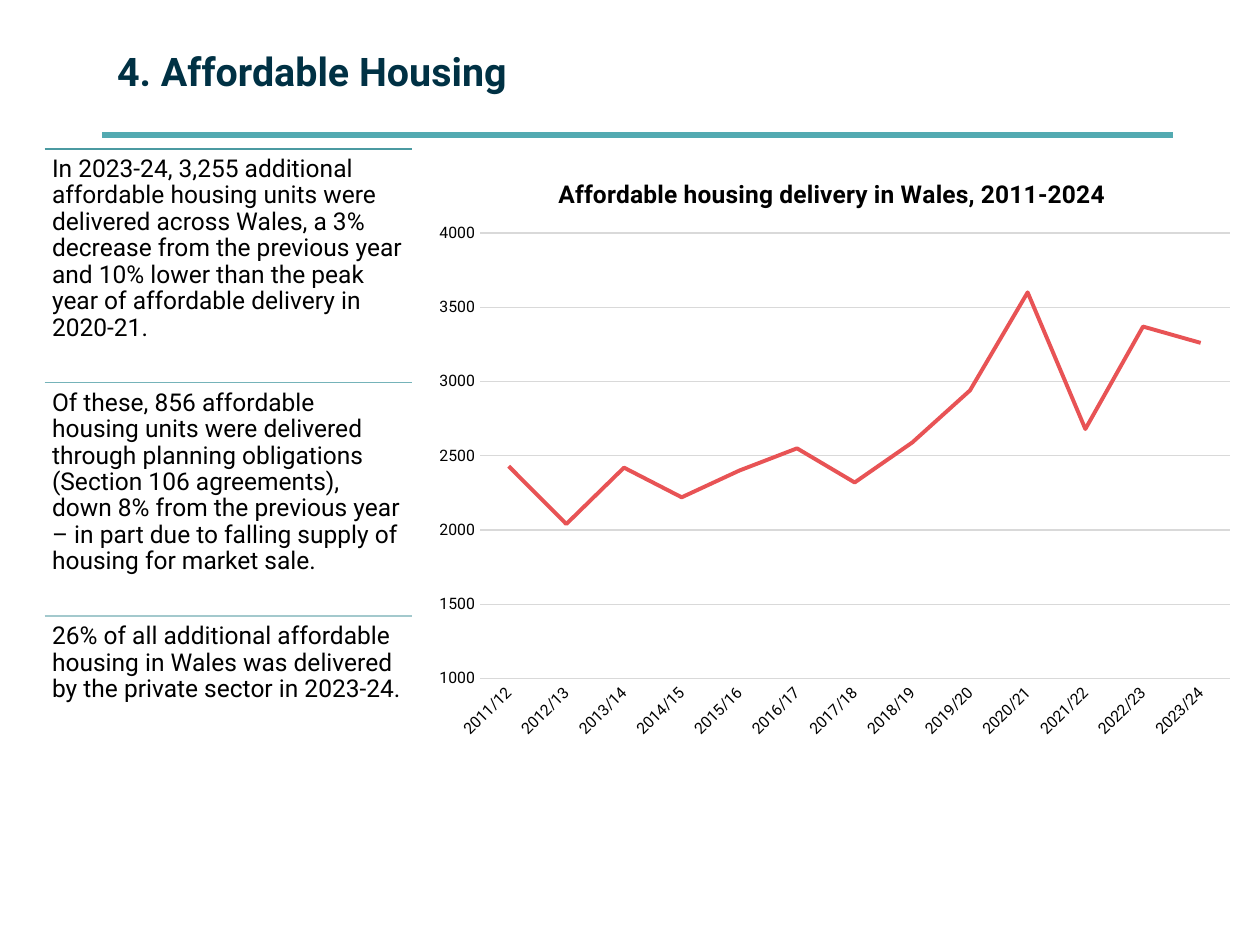
import pptx
import pptx.chart.data
import pptx.dml.color
import pptx.enum.chart
import pptx.enum.shapes
import pptx.enum.text
import pptx.oxml.ns
import pptx.oxml.xmlchemy
import pptx.util
from pptx.util import Cm, Pt

FONT = "Roboto"
BLACK = "000000"
GRID = "D9D9D9"

FACTS = [
    ("4B9AA1", "In 2023-24, 3,255 additional affordable housing units were delivered "
               "across Wales, a 3% decrease from the previous year and 10% lower than "
               "the peak year of affordable delivery in 2020-21."),
    ("75B3B9", "Of these, 856 affordable housing units were delivered through planning "
               "obligations (Section 106 agreements), down 8% from the previous year – "
               "in part due to falling supply of housing for market sale."),
    ("A3C9CD", "26% of all additional affordable housing in Wales was delivered by the "
               "private sector in 2023-24."),
]
UNITS = [2430, 2040, 2420, 2220, 2400, 2550, 2320, 2590, 2940, 3600, 2680, 3370, 3260]
YEARS = [f"{y}/{y % 100 + 1}" for y in range(2011, 2011 + len(UNITS))]


def rgb(value):
    return pptx.dml.color.RGBColor.from_string(value)


def new_element(tag):
    return pptx.oxml.xmlchemy.OxmlElement(tag)


def style_font(font, size, color=BLACK, bold=False):
    font.name, font.size, font.bold = FONT, Pt(size), bold
    font.color.rgb = rgb(color)


def style_line(line, color, width):
    line.color.rgb = rgb(color)
    line.width = Pt(width)


def add_rule(s, x, y, length, color, width):
    """Horizontal line without a shadow."""
    rule = s.shapes.add_connector(
        pptx.enum.shapes.MSO_CONNECTOR.STRAIGHT, Cm(x), Cm(y), Cm(x + length), Cm(y))
    style_line(rule.line, color, width)
    rule._element.spPr.append(new_element("a:effectLst"))


def add_text(s, x, y, w, h, text, size, color=BLACK, bold=False,
             inset=0.15, spacing=None, anchor="TOP"):
    sp = s.shapes.add_textbox(Cm(x), Cm(y), Cm(w), Cm(h))
    tf = sp.text_frame
    tf.word_wrap = True
    tf.vertical_anchor = pptx.enum.text.MSO_ANCHOR[anchor]
    tf.margin_left = tf.margin_right = tf.margin_top = tf.margin_bottom = Cm(inset)
    p = tf.paragraphs[0]
    p.line_spacing = spacing
    r = p.add_run()
    r.text = text
    style_font(r.font, size, color, bold)


def set_layout(element, **fractions):
    """Place a chart part by fractions of the chart frame."""
    layout = element.find(pptx.oxml.ns.qn("c:layout"))
    if layout is None:
        layout = new_element("c:layout")
        element.insert(0, layout)
    manual = new_element("c:manualLayout")
    layout.append(manual)
    settings = {"xMode": "edge", "yMode": "edge", **fractions}
    if "w" in fractions:
        settings = {"layoutTarget": "inner", **settings}
    for name, value in settings.items():
        child = new_element(f"c:{name}")
        child.set("val", str(value))
        manual.append(child)


def style_axis(axis):
    axis.major_tick_mark = axis.minor_tick_mark = pptx.enum.chart.XL_TICK_MARK.NONE
    style_font(axis.tick_labels.font, 9)


def add_delivery_chart(s, x, y, w, h):
    data = pptx.chart.data.CategoryChartData()
    data.categories = YEARS
    data.add_series("Series 1", UNITS)
    chart = s.shapes.add_chart(pptx.enum.chart.XL_CHART_TYPE.LINE_STACKED,
                               Cm(x), Cm(y), Cm(w), Cm(h), data).chart
    chart.has_legend = False
    style_font(chart.font, 10)

    # Title
    chart.has_title = True
    r = chart.chart_title.text_frame.paragraphs[0].add_run()
    r.text = "Affordable housing delivery in Wales, 2011-2024"
    style_font(r.font, 14, bold=True)
    set_layout(chart.chart_title._element, x=0.16, y=0.04)
    set_layout(chart._chartSpace.chart.plotArea, x=0.07, y=0.14, w=0.91, h=0.74)

    # Axes
    years, units = chart.category_axis, chart.value_axis
    style_axis(years)
    style_line(years.format.line, GRID, 0.75)
    years._element.get_or_add_txPr().bodyPr.set("rot", "-2700000")
    style_axis(units)
    units.format.line.fill.background()
    units.minimum_scale, units.maximum_scale, units.major_unit = 1000, 4000, 500
    style_line(units.major_gridlines.format.line, GRID, 0.75)

    # Series
    series = chart.plots[0].series[0]
    series.smooth = False
    series.marker.style = pptx.enum.chart.XL_MARKER_STYLE.NONE
    style_line(series.format.line, "E85355", 2.25)


def main():
    prs = pptx.Presentation()
    prs.slide_width, prs.slide_height = Cm(25.4), Cm(19.05)
    s = prs.slides.add_slide(prs.slide_layouts[6])

    # Heading
    add_rule(s, 2.06, 2.72, 21.59, "53AAB1", 3.5)
    add_text(s, 2.11, 0.18, 21.59, 2.49, "4. Affordable Housing", 22.5,
             "003144", bold=True, inset=0.25, anchor="MIDDLE")

    # Key facts, evenly stacked
    left, top, width, step = 0.9, 3, 7.4, 4.71
    for i, (color, fact) in enumerate(FACTS):
        y = top + i * step
        add_rule(s, left, y, width, color, 0.85)
        add_text(s, left, y, width, step, fact, 14, spacing=0.9)

    # Chart
    add_delivery_chart(s, 8.51, 3, 16.61, 12.14)
    prs.save("out.pptx")


if __name__ == "__main__":
    main()
